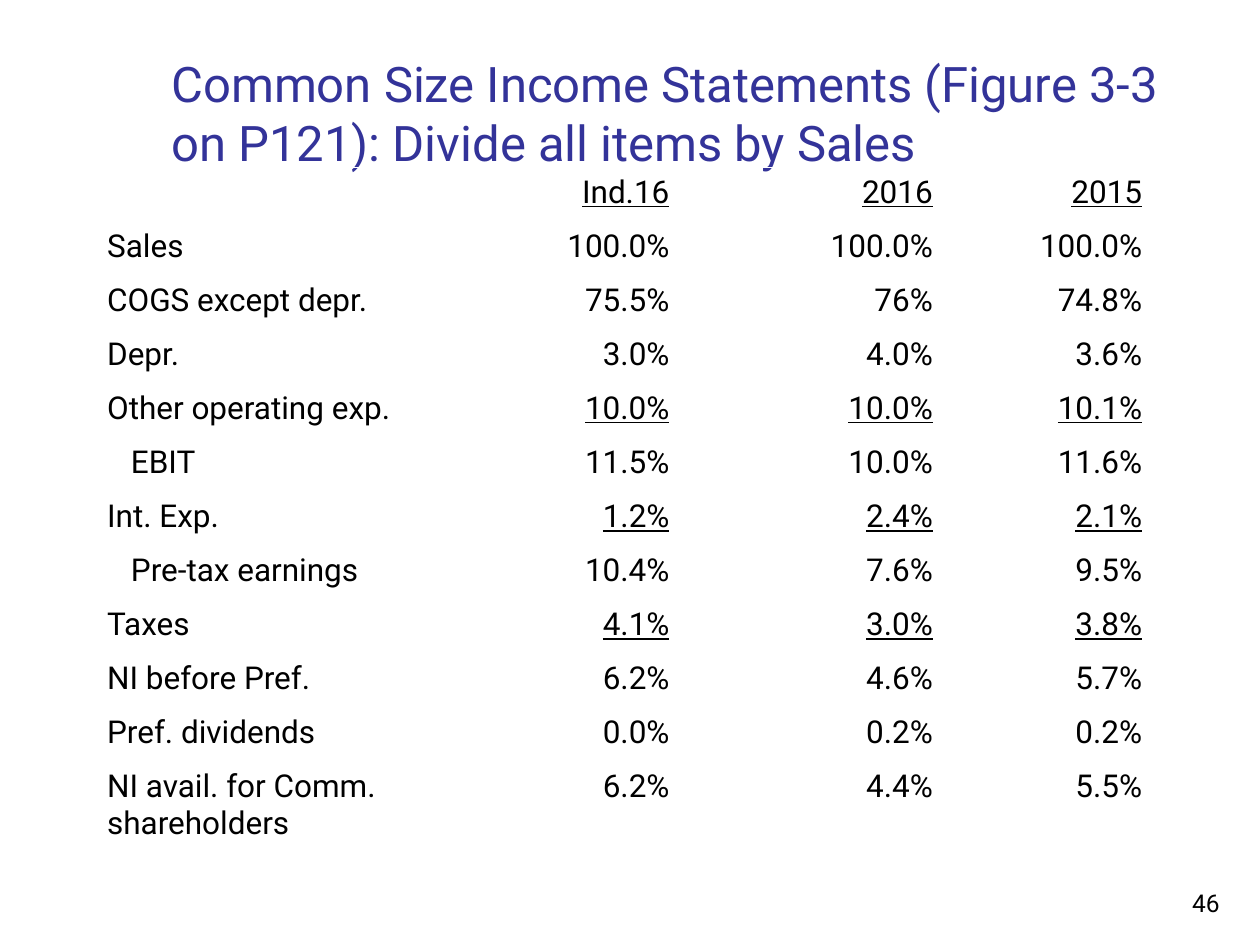
import pptx
import pptx.util
import pptx.dml.color
import pptx.enum.text
from dataclasses import dataclass

Cm, Pt = pptx.util.Cm, pptx.util.Pt
Align = pptx.enum.text.PP_ALIGN
Anchor = pptx.enum.text.MSO_ANCHOR
Fit = pptx.enum.text.MSO_AUTO_SIZE


@dataclass(frozen=True)
class Theme:
    face: str = "Roboto"
    ink: str = "000000"
    blue: str = "333399"
    head: int = 28
    body: int = 18
    foot: int = 14


THEME = Theme()
TITLE = "Common Size Income Statements (Figure 3-3 on P121): Divide all items by Sales"
COLS = (7.01, 4.83, 5.31, 4.22)
ROW, LAST = 1.09, 2.77
PAD, STEP = 0.25, 0.48

# Label, indent level, underlined values, then the three values
ROWS = (
    ("", 0, True, "Ind.16", "2016", "2015"),
    ("Sales", 0, False, "100.0%", "100.0%", "100.0%"),
    ("COGS except depr.", 0, False, "75.5%", "76%", "74.8%"),
    ("Depr.", 0, False, "3.0%", "4.0%", "3.6%"),
    ("Other operating exp.", 0, True, "10.0%", "10.0%", "10.1%"),
    ("EBIT", 1, False, "11.5%", "10.0%", "11.6%"),
    ("Int. Exp.", 0, True, "1.2%", "2.4%", "2.1%"),
    ("Pre-tax earnings", 1, False, "10.4%", "7.6%", "9.5%"),
    ("Taxes", 0, True, "4.1%", "3.0%", "3.8%"),
    ("NI before Pref.", 0, False, "6.2%", "4.6%", "5.7%"),
    ("Pref. dividends", 0, False, "0.0%", "0.2%", "0.2%"),
    ("NI avail. for Comm. shareholders", 0, False, "6.2%", "4.4%", "5.5%"),
)


def apply(item, form):
    for key, value in form.items():
        setattr(item, key, value)


def place(shape, left, top, width, height):
    apply(shape, {"left": Cm(left), "top": Cm(top),
                  "width": Cm(width), "height": Cm(height)})


def write(frame, text, size, tint, align, line=False):
    frame.text = text
    par = frame.paragraphs[0]
    par.alignment = align
    apply(par.font, {"name": THEME.face, "size": Pt(size),
                     "bold": False, "underline": line})
    par.font.color.rgb = pptx.dml.color.RGBColor.from_string(tint)


def add_title(slide):
    shape = slide.shapes.title
    place(shape, 3.2, 0.58, 21.64, 3)
    apply(shape.text_frame, {"word_wrap": True, "auto_size": Fit.NONE,
                             "vertical_anchor": Anchor.BOTTOM})
    write(shape.text_frame, TITLE, THEME.head, THEME.blue, Align.LEFT)


def add_grid(slide):
    high = ROW * (len(ROWS) - 1) + LAST
    grid = slide.shapes.add_table(len(ROWS), len(COLS), Cm(1.91), Cm(3.38),
                                  Cm(sum(COLS)), Cm(high)).table
    apply(grid, {"first_row": False, "horz_banding": False})
    for col, width in zip(grid.columns, COLS):
        col.width = Cm(width)
    for row in grid.rows:
        row.height = Cm(ROW)
    grid.rows[len(ROWS) - 1].height = Cm(LAST)

    # Labels sit left, values sit right
    for r, (label, level, line, *values) in enumerate(ROWS):
        for c, text in enumerate((label, *values)):
            cell = grid.cell(r, c)
            cell.fill.background()
            align = Align.RIGHT if c else Align.LEFT
            write(cell.text_frame, text, THEME.body, THEME.ink, align,
                  line and c > 0)
        grid.cell(r, 0).margin_left = Cm(PAD + STEP * level)


def add_number(slide):
    box = slide.shapes.add_textbox(Cm(19.56), Cm(17.35), Cm(5.28), Cm(1.27))
    apply(box.text_frame, {"word_wrap": True, "vertical_anchor": Anchor.BOTTOM})
    write(box.text_frame, "46", THEME.foot, THEME.ink, Align.RIGHT)


def main():
    deck = pptx.Presentation()
    apply(deck, {"slide_width": Cm(25.4), "slide_height": Cm(19.05)})
    slide = deck.slides.add_slide(deck.slide_layouts.get_by_name("Title Only"))
    add_number(slide)
    add_title(slide)
    add_grid(slide)
    deck.save("out.pptx")


if __name__ == "__main__":
    main()
